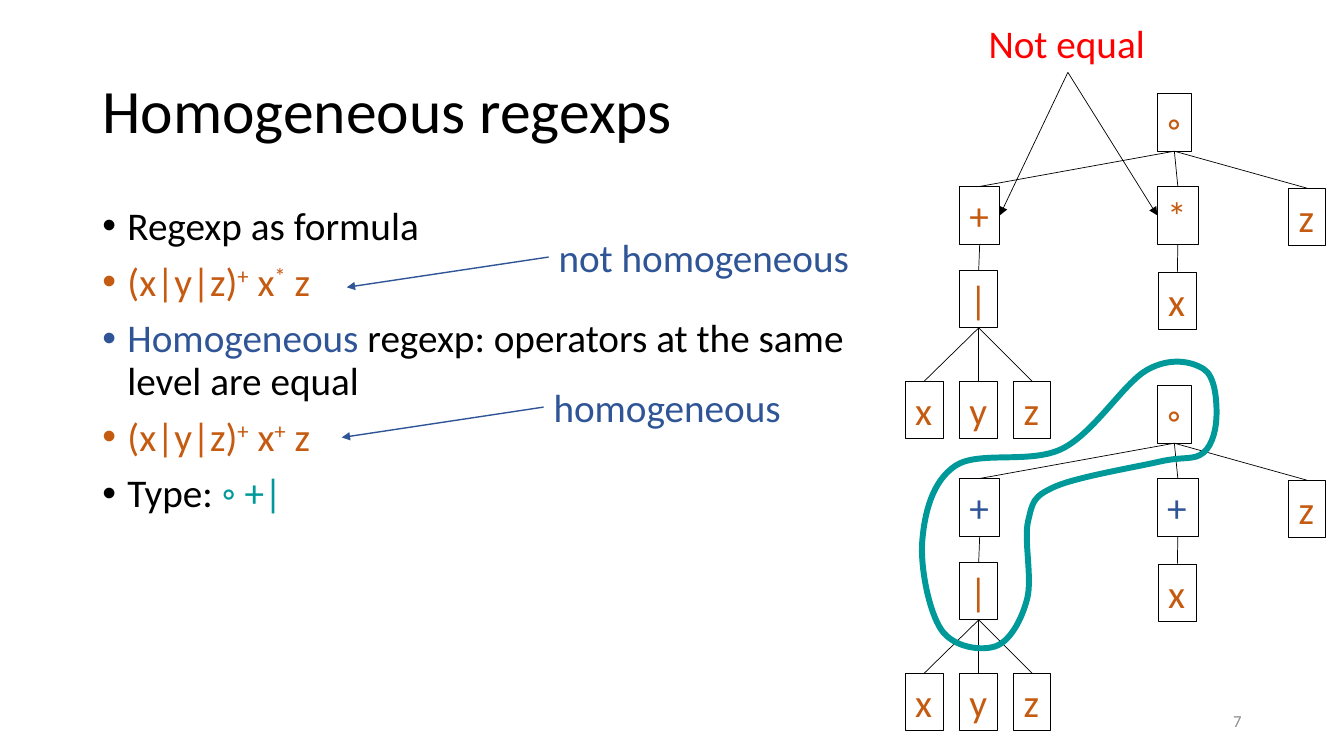
from lxml import etree
from pptx import Presentation
from pptx import util as u
from pptx.dml.color import RGBColor
from pptx.enum import shapes, text
from pptx.oxml.ns import qn

BLACK = RGBColor(0x00, 0x00, 0x00)
RED = RGBColor(0xFF, 0x00, 0x00)
ORANGE = RGBColor(0xC5, 0x5A, 0x11)
BLUE = RGBColor(0x2F, 0x55, 0x97)
TEAL = RGBColor(0x00, 0x99, 0x99)
GRAY = RGBColor(0x8C, 0x8C, 0x8C)

FONT = "Calibri"
BOTTOM, TOP, LEFT, RIGHT = 2, 0, 1, 3
NODE_H = 41.2
LABEL = {"word_wrap": False, "auto_size": text.MSO_AUTO_SIZE.SHAPE_TO_FIT_TEXT,
         "vertical_anchor": text.MSO_ANCHOR.TOP}
BLOCK = {"word_wrap": True, "auto_size": text.MSO_AUTO_SIZE.NONE}
MIDDLE = {**BLOCK, "vertical_anchor": text.MSO_ANCHOR.MIDDLE}

BULLETS = [
    [("Regexp as formula", BLACK, 0)],
    [("(x|y|z)", ORANGE, 0), ("+", ORANGE, 30), (" x", ORANGE, 0),
     ("*", ORANGE, 30), (" z", ORANGE, 0)],
    [("Homogeneous", BLUE, 0),
     (" regexp: operators at the same\nlevel are equal", BLACK, 0)],
    [("(x|y|z)", ORANGE, 0), ("+", ORANGE, 30), (" x", ORANGE, 0),
     ("+", ORANGE, 30), (" z", ORANGE, 0)],
    [("Type: ", BLACK, 0), ("◦ +|", TEAL, 0)],
]

NODES = {
    "root": ("◦", 826.6, 66.8, 24.5),
    "left": ("+", 685.4, 133.2, 28.8),
    "mid": ("*", 826.6, 133.2, 29.5),
    "right": ("z", 920.6, 134.4, 25.9),
    "or": ("|", 685.4, 193, 27.4),
    "mid_leaf": ("x", 827.3, 194.4, 27.4),
    "x": ("x", 646.6, 272.2, 27.4),
    "y": ("y", 685.4, 272.2, 27.4),
    "z": ("z", 724.2, 272.2, 25.9),
}
EDGES = [("root", "left"), ("root", "mid"), ("root", "right"), ("left", "or"),
         ("mid", "mid_leaf"), ("or", "x"), ("or", "y"), ("or", "z")]

LASSO = [(819.4, 264.2), (758.9, 320.4), (682.6, 332.6), (658.8, 385.9),
         (672.5, 450), (711.4, 461.5), (733.7, 427.7), (734.4, 372.2),
         (753.1, 347.8), (828, 329.8), (859.7, 323.3), (869, 295.2),
         (859.7, 263.5)]


def put(obj, formats):
    """Set each attribute named in formats on obj."""
    for name, value in formats.items():
        setattr(obj, name, value)


def add_run(p, words, color, size, raised=0):
    """Add words to a paragraph, breaking the line at each newline."""
    for i, part in enumerate(words.split("\n")):
        if i:
            p.add_line_break()
            br = p._p.findall(qn("a:br"))[-1]
            etree.SubElement(br, qn("a:rPr")).set("sz", str(size * 100))
        r = p.add_run()
        put(r, {"text": part})
        put(r.font, {"name": FONT, "size": u.Pt(size)})
        r.font.color.rgb = color
        if raised:
            r._r.get_or_add_rPr().set("baseline", str(raised * 1000))


def add_text(s, box, words, color, size, frame, align=text.PP_ALIGN.LEFT):
    """Add a one-paragraph text box."""
    sp = s.shapes.add_textbox(*map(u.Pt, box))
    put(sp.text_frame, frame)
    p = sp.text_frame.paragraphs[0]
    put(p, {"alignment": align})
    add_run(p, words, color, size)
    return sp


def add_bullets(s, box, items):
    """Add the bulleted body text."""
    tf = s.shapes.add_textbox(*map(u.Pt, box)).text_frame
    put(tf, BLOCK)
    for i, runs in enumerate(items):
        p = tf.add_paragraph() if i else tf.paragraphs[0]
        put(p, {"line_spacing": 0.9, "space_before": u.Pt(10)})
        pPr = p._p.get_or_add_pPr()
        pPr.set("marL", str(u.Pt(18)))
        pPr.set("indent", str(u.Pt(-18)))
        etree.SubElement(pPr, qn("a:buFont")).set("typeface", "Arial")
        etree.SubElement(pPr, qn("a:buChar")).set("char", "•")
        for words, color, raised in runs:
            add_run(p, words, color, 28, raised)


def add_line(s, start, end, color=BLACK, width=0.5, arrow=False):
    """Add a line from a (shape, side) joint to a joint or an (x, y) point."""
    c = s.shapes.add_connector(shapes.MSO_CONNECTOR.STRAIGHT, 0, 0, 0, 0)
    c.begin_connect(*start)
    if isinstance(end[0], (int, float)):
        put(c, {"end_x": u.Pt(end[0]), "end_y": u.Pt(end[1])})
    else:
        c.end_connect(*end)
    c.line.color.rgb = color
    c.line.width = u.Pt(width)
    if arrow:
        etree.SubElement(c.line._get_or_add_ln(), qn("a:tailEnd")).set("type", "triangle")
    etree.SubElement(c._element.spPr, qn("a:effectLst"))


def add_node(s, words, x, y, w, color):
    """Add one outlined tree node."""
    sp = s.shapes.add_shape(shapes.MSO_SHAPE.RECTANGLE, *map(u.Pt, (x, y, w, NODE_H)))
    sp.shadow.inherit = False
    sp.fill.background()
    sp.line.color.rgb = BLACK
    sp.line.width = u.Pt(0.75)
    put(sp.text_frame, LABEL)
    p = sp.text_frame.paragraphs[0]
    put(p, {"alignment": text.PP_ALIGN.LEFT})
    add_run(p, words, color, 28)
    return sp


def add_tree(s, dy=0, changes=None):
    """Add a regexp tree moved down by dy, with some nodes changed."""
    changes = changes or {}
    tree = {}
    for name, (words, x, y, w) in NODES.items():
        words, color = changes.get(name, (words, ORANGE))
        tree[name] = add_node(s, words, x, y + dy, w, color)
    for parent, child in EDGES:
        add_line(s, (tree[parent], BOTTOM), (tree[child], TOP))
    return tree


def add_loop(s, knots, color, width):
    """Add a smooth closed outline, one Catmull-Rom curve between knots."""
    knots = [(u.Pt(x), u.Pt(y)) for x, y in knots]
    builder = s.shapes.build_freeform(*knots[0])
    builder.add_line_segments(knots[1:] + knots[:1], close=True)
    sp = builder.convert_to_shape()
    n = len(knots)
    for i, segment in enumerate(list(sp._element.iter(qn("a:lnTo")))):
        a, b, c, d = (knots[(i + k) % n] for k in (-1, 0, 1, 2))
        leave = [q + (r - p) / 6 for p, q, r in zip(a, b, c)]
        arrive = [q - (r - p) / 6 for p, q, r in zip(b, c, d)]
        segment.tag = qn("a:cubicBezTo")
        for k, (x, y) in enumerate((leave, arrive)):
            pt = etree.Element(qn("a:pt"))
            pt.set("x", str(round(x - sp.left)))
            pt.set("y", str(round(y - sp.top)))
            segment.insert(k, pt)
    sp.shadow.inherit = False
    sp.fill.background()
    sp.line.color.rgb = color
    sp.line.width = u.Pt(width)


def add_callout(s, box, words, tip):
    """Add a blue label with an arrow from its left side to tip."""
    sp = add_text(s, box, words, BLUE, 28, LABEL)
    add_line(s, (sp, LEFT), tip, BLUE, 1, True)


def main():
    """Build the slide and save it."""
    prs = Presentation()
    put(prs, {"slide_width": u.Pt(960), "slide_height": u.Pt(540)})
    s = prs.slides.add_slide(prs.slide_layouts[6])
    title = add_text(s, (66, 28.8, 828, 104.4), "Homogeneous regexps", BLACK, 44, MIDDLE)
    put(title.text_frame.paragraphs[0], {"line_spacing": 0.9})
    add_bullets(s, (66, 143.75, 557.3, 342.7), BULLETS)
    add_text(s, (678, 500.4, 216, 28.8), "7", GRAY, 12, MIDDLE, text.PP_ALIGN.RIGHT)

    tree = add_tree(s)
    unequal = add_text(s, (699.1, 10.5, 127.4, NODE_H), "Not equal", RED, 28, LABEL)
    for name, side in (("left", RIGHT), ("mid", LEFT)):
        add_line(s, (unequal, BOTTOM), (tree[name], side), arrow=True)
    add_tree(s, 208.6, {"left": ("+", BLUE), "mid": ("+", BLUE)})

    add_callout(s, (391.9, 163, 224.6, NODE_H), "not homogeneous", (247.7, 205.2))
    add_callout(s, (388.3, 270.2, 178.6, NODE_H), "homogeneous", (244.1, 312.5))
    add_loop(s, LASSO, TEAL, 4.25)
    prs.save("out.pptx")


if __name__ == "__main__":
    main()
